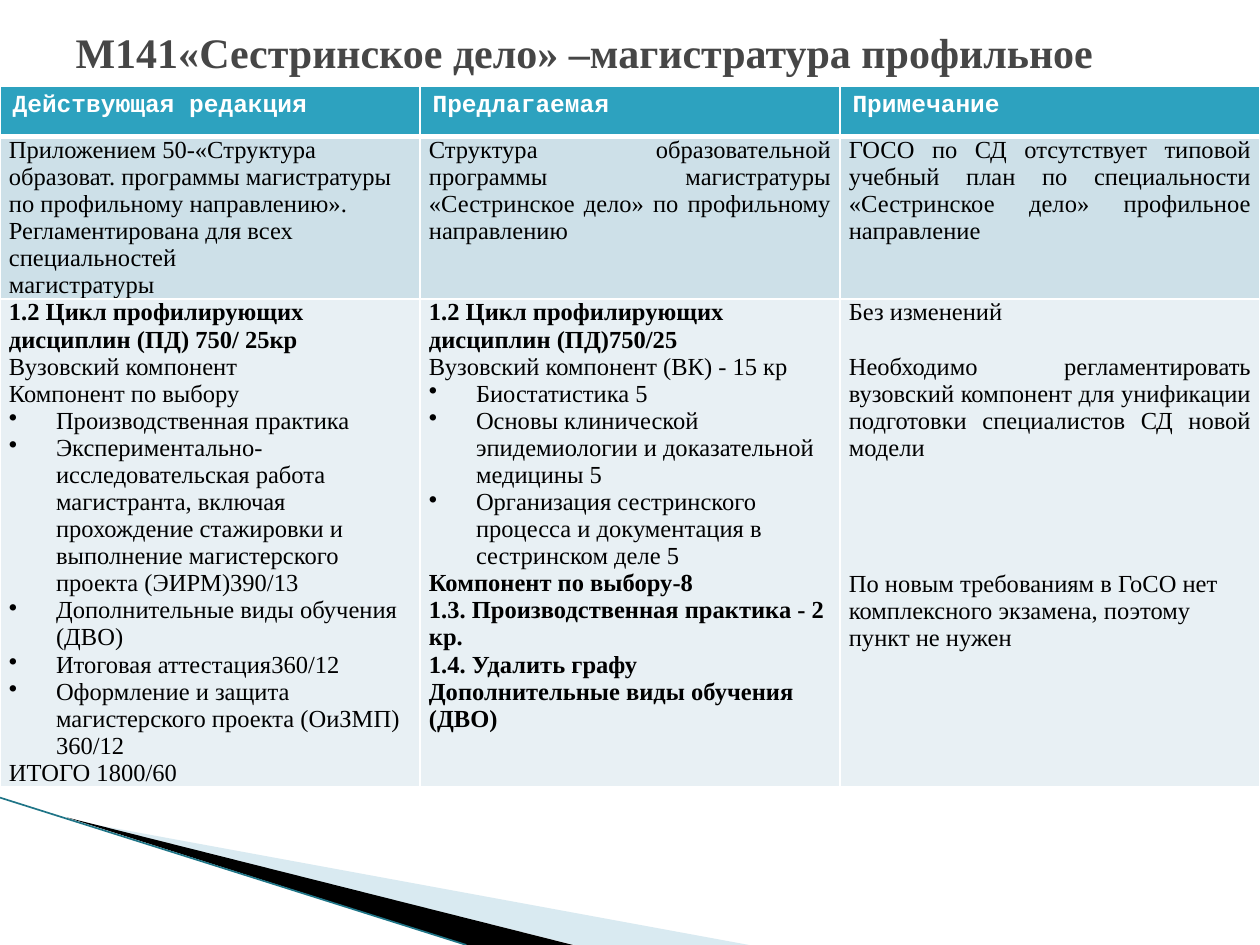
from lxml.etree import SubElement
from pptx import Presentation
from pptx.dml.color import RGBColor
from pptx.enum.shapes import MSO_CONNECTOR
from pptx.enum.text import MSO_ANCHOR, PP_ALIGN
from pptx.oxml.ns import qn
from pptx.util import Cm, Pt

COLORS = {
    "title": "464646", "header": "2DA2BF", "band": "CDE0E8", "pale": "E8F0F4",
    "white": "FFFFFF", "black": "000000", "wedge": "A0CBDC", "edge": "1F7587",
}
SERIF, MONO = "Times New Roman", "Courier New"
TITLE = "М141«Сестринское дело» –магистратура профильное"
HEADERS = ["Действующая редакция", "Предлагаемая", "Примечание"]
STRUCTURE = [
    [("Приложением 50-«Структура образоват. программы магистратуры по профильному "
      "направлению». Регламентирована для всех специальностей", {}),
     ("магистратуры", {})],
    [("Структура образовательной программы магистратуры «Сестринское дело» "
      "по профильному направлению", {"justify": True})],
    [("ГОСО по СД отсутствует типовой учебный план по специальности "
      "«Сестринское дело» профильное направление", {"justify": True})],
]
CYCLE = [
    [("1.2 Цикл профилирующих дисциплин (ПД) 750/ 25кр", {"bold": True}),
     ("Вузовский компонент", {}),
     ("Компонент по выбору", {}),
     ("Производственная практика", {"bullet": True}),
     ("Экспериментально-исследовательская работа магистранта, включая прохождение "
      "стажировки и выполнение магистерского проекта (ЭИРМ)390/13", {"bullet": True}),
     ("Дополнительные виды обучения (ДВО)", {"bullet": True}),
     ("Итоговая аттестация360/12", {"bullet": True}),
     ("Оформление и защита магистерского проекта (ОиЗМП) 360/12", {"bullet": True}),
     ("ИТОГО 1800/60", {})],
    [("1.2 Цикл профилирующих дисциплин (ПД)750/25", {"bold": True}),
     ("Вузовский компонент (ВК) - 15 кр", {}),
     ("Биостатистика 5", {"bullet": True}),
     ("Основы клинической эпидемиологии и доказательной медицины 5", {"bullet": True}),
     ("Организация сестринского процесса и документация в сестринском деле 5",
      {"bullet": True}),
     ("Компонент по выбору-8", {"bold": True}),
     ("1.3. Производственная практика - 2 кр.", {"bold": True}),
     ("1.4. Удалить графу Дополнительные виды обучения (ДВО)", {"bold": True})],
    [("Без изменений", {"justify": True}),
     ("Необходимо регламентировать вузовский компонент для унификации подготовки "
      "специалистов СД новой модели", {"justify": True, "before": 15.5}),
     ("По новым требованиям в ГоСО нет комплексного экзамена, поэтому пункт не нужен",
      {"before": 62})],
]


def rgb(name):
    """Return a palette colour."""
    return RGBColor.from_string(COLORS[name])


def style_font(paragraph, size, name, color, bold):
    """Set the font of a whole paragraph."""
    font = paragraph.font
    font.size, font.name, font.bold = Pt(size), name, bold
    font.color.rgb = rgb(color)


def add_bullet(paragraph):
    """Give a paragraph a hanging round bullet."""
    properties = paragraph._p.get_or_add_pPr()
    properties.set("marL", str(Cm(0.95)))
    properties.set("indent", str(-Cm(0.95)))
    SubElement(properties, qn("a:buChar")).set("char", "•")


def fill_text(cell, items, name, color):
    """Write the paragraphs of one table cell."""
    frame = cell.text_frame
    for index, (text, options) in enumerate(items):
        paragraph = frame.add_paragraph() if index else frame.paragraphs[0]
        paragraph.text = text
        paragraph.alignment = PP_ALIGN.JUSTIFY if options.get("justify") else PP_ALIGN.LEFT
        if "before" in options:
            paragraph.space_before = Pt(options["before"])
        if options.get("bullet"):
            add_bullet(paragraph)
        style_font(paragraph, 14, name, color, options.get("bold", False))


def style_cell(cell, color, top, bottom):
    """Draw white borders around a cell and fill it."""
    properties = cell._tc.get_or_add_tcPr()
    for side, width in (("L", 1), ("R", 1), ("T", top), ("B", bottom)):
        line = SubElement(properties, qn(f"a:ln{side}"), w=str(Pt(width)))
        fill = SubElement(line, qn("a:solidFill"))
        SubElement(fill, qn("a:srgbClr")).set("val", COLORS["white"])
    cell.fill.solid()
    cell.fill.fore_color.rgb = rgb(color)


def add_wedge(slide, left, top, points, color, alpha=100):
    """Draw a filled triangle from offsets in centimetres."""
    corners = [(left + Cm(x), top + Cm(y)) for x, y in points]
    builder = slide.shapes.build_freeform(*corners[0])
    builder.add_line_segments(corners[1:])
    shape = builder.convert_to_shape()
    shape.shadow.inherit = False
    shape.line.fill.background()
    shape.fill.solid()
    shape.fill.fore_color.rgb = rgb(color)
    if alpha < 100:
        tint = shape._element.spPr.find(".//" + qn("a:srgbClr"))
        SubElement(tint, qn("a:alpha")).set("val", str(alpha * 1000))


def add_corner(slide, left, top, width, height):
    """Draw the wedges and the edge line in the bottom corner."""
    add_wedge(slide, left, top, [(1.4, 0.45), (15.1, 2.97), (11.58, 2.97)], "wedge", 40)
    add_wedge(slide, left, top, [(1.35, 0.4), (11.55, 2.97), (9.4, 2.97)], "black")
    edge = slide.shapes.add_connector(
        MSO_CONNECTOR.STRAIGHT, left, top, left + width, top + height)
    edge.line.color.rgb = rgb("edge")
    edge.line.width = Pt(0.95)
    SubElement(edge._element.spPr, qn("a:effectLst"))


def add_title(slide, left, top, width, height):
    """Place and format the title placeholder."""
    title = slide.shapes.title
    title.left, title.top, title.width, title.height = left, top, width, height
    title.text_frame.vertical_anchor = MSO_ANCHOR.MIDDLE
    paragraph = title.text_frame.paragraphs[0]
    paragraph.text = TITLE
    paragraph.alignment = PP_ALIGN.LEFT
    style_font(paragraph, 24, SERIF, "title", True)


def add_comparison(slide, left, top, width, height):
    """Build the table that compares the two versions."""
    header_row = [[(text, {"bold": True})] for text in HEADERS]
    rows = [
        (header_row, "header", MONO, "white", Cm(1.02)),
        (STRUCTURE, "band", SERIF, "black", Cm(3.28)),
        (CYCLE, "pale", SERIF, "black", height - Cm(4.3)),
    ]
    table = slide.shapes.add_table(len(rows), len(HEADERS), left, top, width, height).table
    for index, (contents, fill, font, color, row_height) in enumerate(rows):
        table.rows[index].height = row_height
        for column, items in enumerate(contents):
            cell = table.cell(index, column)
            if index:
                cell.margin_left = cell.margin_right = Cm(0.18)
                cell.margin_top = cell.margin_bottom = 0
            style_cell(cell, fill, 3 if index == 1 else 1, 1 if index else 3)
            fill_text(cell, items, font, color)


def main():
    """Build and save the slide."""
    presentation = Presentation()
    presentation.slide_width, presentation.slide_height = Cm(25.4), Cm(19.05)
    slide = presentation.slides.add_slide(presentation.slide_layouts[5])
    add_corner(slide, 0, Cm(16.08), Cm(9.4), Cm(2.97))
    add_title(slide, Cm(1.27), Cm(0.36), Cm(22.86), Cm(1.37))
    add_comparison(slide, 0, Cm(1.73), Cm(25.4), Cm(14.13))
    presentation.save("out.pptx")


if __name__ == "__main__":
    main()
